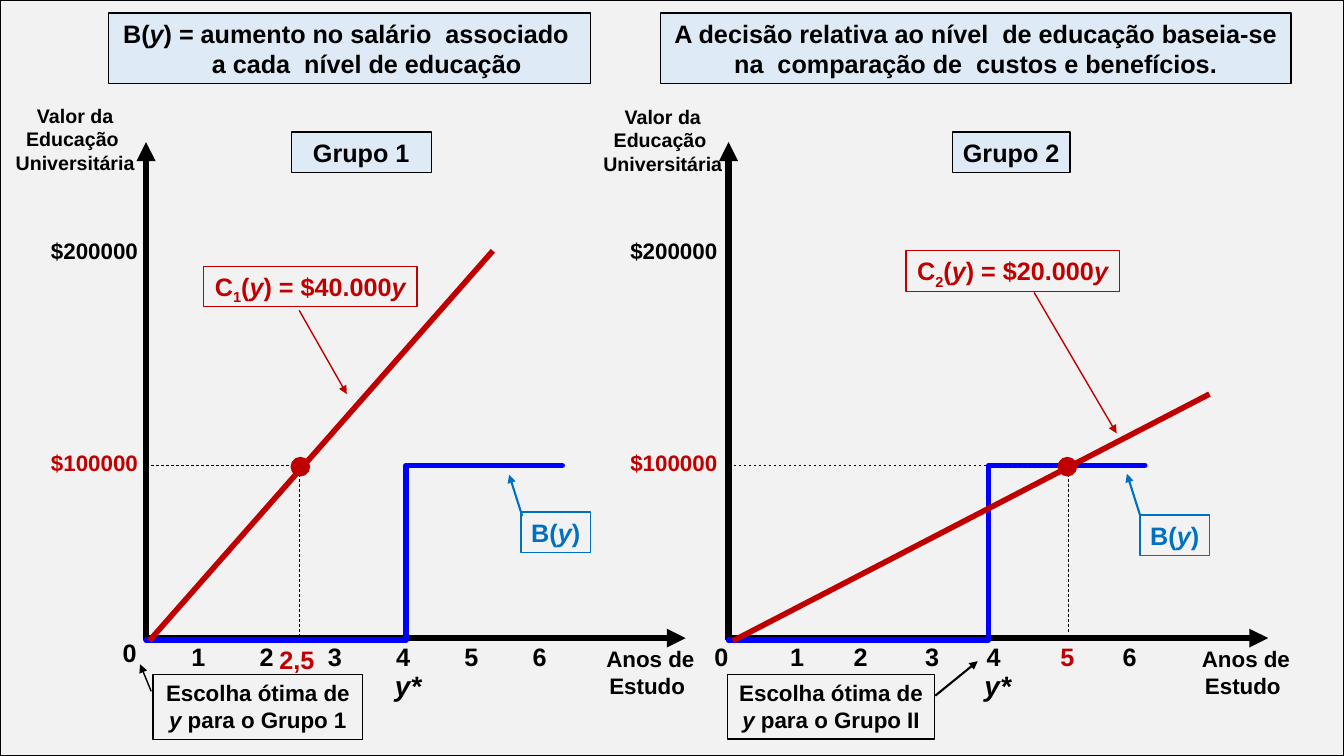
"""Builds the slide comparing the education choice of two groups."""
import pptx
import pptx.dml.color
import pptx.enum.shapes
import pptx.enum.text
import pptx.oxml
import pptx.oxml.ns
import pptx.util

Cm = pptx.util.Cm
Pt = pptx.util.Pt
RGBColor = pptx.dml.color.RGBColor
SHAPES = pptx.enum.shapes.MSO_SHAPE
COLORS = {
    "black": "000000",
    "background": "F2F2F2",
    "box": "DEEBF7",
    "cost": "C00000",
    "benefit": "0000FF",
    "benefit_label": "0070C0",
}

presentation = pptx.Presentation()
presentation.slide_width = Cm(33.87)
presentation.slide_height = Cm(19.05)
slide = presentation.slides.add_slide(presentation.slide_layouts[6])


def add_box(frame, paragraphs=(), size=18, color="black", fill=None, line=None,
            wrap=False, kind=SHAPES.RECTANGLE):
    """Adds a shape; each paragraph is a list of (text, style) runs."""
    shape = slide.shapes.add_shape(kind, *[Cm(length) for length in frame])
    shape.shadow.inherit = False
    if fill:
        shape.fill.solid()
        shape.fill.fore_color.rgb = RGBColor.from_string(COLORS[fill])
    else:
        shape.fill.background()
    if line:
        shape.line.color.rgb = RGBColor.from_string(COLORS[line])
        shape.line.width = Pt(1)
    else:
        shape.line.fill.background()
    text_frame = shape.text_frame
    text_frame.word_wrap = wrap
    text_frame.vertical_anchor = pptx.enum.text.MSO_ANCHOR.TOP
    for index, runs in enumerate(paragraphs):
        paragraph = text_frame.add_paragraph() if index else text_frame.paragraphs[0]
        paragraph.alignment = pptx.enum.text.PP_ALIGN.CENTER
        for text, style in runs:
            run = paragraph.add_run()
            run.text = text
            run.font.name = "Arial"
            run.font.size = Pt(size)
            run.font.bold = True
            run.font.italic = style == "italic"
            run.font.color.rgb = RGBColor.from_string(COLORS[color])
            if style == "subscript":
                run.font._element.set("baseline", "-25000")
    return shape


def add_line(points, color, width, arrow=False, dashed=False):
    """Adds a straight line between two points (x1, y1, x2, y2)."""
    connector = slide.shapes.add_connector(
        pptx.enum.shapes.MSO_CONNECTOR.STRAIGHT, *[Cm(length) for length in points])
    connector.line.color.rgb = RGBColor.from_string(COLORS[color])
    connector.line.width = Pt(width)
    if dashed:
        connector.line.dash_style = pptx.enum.dml.MSO_LINE.DASH
    if arrow:
        tail = pptx.oxml.parse_xml(
            f'<a:tailEnd {pptx.oxml.ns.nsdecls("a")} type="triangle"/>')
        connector.line._get_or_add_ln().append(tail)
    effects = pptx.oxml.parse_xml(f'<a:effectLst {pptx.oxml.ns.nsdecls("a")}/>')
    connector._element.spPr.append(effects)


groups = [
    {
        "name": "Grupo 1", "name_frame": (7.34, 3.33, 3.53, 1.02),
        "axis": 3.68, "value_title": (0.13, 2.49), "value_left": 1.02,
        "years_left": 14.94, "zero": (2.84, 15.93),
        "ticks": [4.57 + 1.72 * step for step in range(6)], "chosen_tick": None,
        "cost_index": "1", "cost_value": "$40.000", "cost_box": (5.13, 6.71),
        "cost_line": (3.76, 16.15, 12.42, 6.32),
        "cost_arrow": (7.54, 7.82, 8.74, 9.93),
        "benefit_box": (13.13, 12.9), "benefit_arrow": (13.16, 13, 12.83, 11.96),
        "star_left": 9.7, "dot_left": 7.34, "guide": (7.54, 11.94, 7.54, 16.03),
        "choice": " para o Grupo 1", "choice_frame": (3.86, 16.99, 5.28, 1.65),
        "choice_arrow": (3.81, 17.42, 3.53, 16.74), "choice_width": 1,
    },
    {
        "name": "Grupo 2", "name_frame": (24, 3.33, 2.97, 1.02),
        "axis": 18.36, "value_title": (14.94, 2.51), "value_left": 15.62,
        "years_left": 29.95, "zero": (17.75, 16.03),
        "ticks": [19.66, 21.26, 23.06, 24.61, 26.47, 28.04], "chosen_tick": 5,
        "cost_index": "2", "cost_value": "$20.000", "cost_box": (22.83, 6.32),
        "cost_line": (18.47, 16.15, 30.48, 9.93),
        "cost_arrow": (26.06, 7.37, 28.14, 10.92),
        "benefit_box": (28.73, 12.98), "benefit_arrow": (28.73, 12.98, 28.4, 11.94),
        "star_left": 24.56, "dot_left": 26.67, "guide": (26.92, 11.81, 26.92, 15.93),
        "choice": " para o Grupo II", "choice_frame": (18.34, 16.99, 5.21, 1.63),
        "choice_arrow": (23.57, 17.53, 24.64, 16.66), "choice_width": 1.5,
    },
]

add_box((0, 0, 33.87, 19.05), fill="background", line="black")

benefit_title = add_box(
    (2.74, 0.33, 12.14, 1.78),
    [[("B(", ""), ("y", "italic"), (") = aumento no salário  associado ", "")],
     [("a cada  nível de educação", "")]],
    fill="box", line="black", wrap=True)
second_line = benefit_title.text_frame.paragraphs[1]
second_line._element.get_or_add_pPr().set("marL", str(Cm(0.86)))
add_box(
    (16.64, 0.33, 15.9, 1.78),
    [[("A decisão relativa ao nível  de educação baseia-se "
       "na  comparação de  custos e benefícios.", "")]],
    fill="box", line="black", wrap=True)

for group in groups:
    axis = group["axis"]
    add_line((axis, 16.13, axis, 3.58), "black", 4.5, arrow=True)
    add_line((axis + 0.05, 16.08, axis + 13.6, 16.08), "black", 4.5, arrow=True)
    add_box((*group["value_title"], 3.53, 2.06),
            [[("Valor da", "")], [("Educação ", "")], [("Universitária", "")]], size=14)
    add_box((group["years_left"], 16.13, 2.9, 1.63), [[("Anos de Estudo ", "")]],
            size=16, wrap=True)
    for amount, top, color in (("$200000", 5.84, "black"), ("$100000", 11.2, "cost")):
        add_box((group["value_left"], top, 2.72, 0.94), [[(amount, "")]],
                size=16, color=color)
    add_box((*group["zero"], 0.86, 1.02), [[("0", "")]])
    for year, left in enumerate(group["ticks"], start=1):
        add_box((left, 16.03, 0.86, 1.02), [[(str(year), "")]],
                color="cost" if year == group["chosen_tick"] else "black")
    add_box(group["name_frame"], [[(group["name"], "")]], fill="box", line="black")

    builder = slide.shapes.build_freeform(Cm(axis), Cm(16.13))
    builder.add_line_segments(
        [(Cm(axis + 6.55), Cm(16.13)), (Cm(axis + 6.55), Cm(11.73)),
         (Cm(axis + 10.49), Cm(11.73))], close=False)
    benefit = builder.convert_to_shape()
    benefit.shadow.inherit = False
    benefit.fill.background()
    benefit.line.color.rgb = RGBColor.from_string(COLORS["benefit"])
    benefit.line.width = Pt(4)
    benefit.line._get_or_add_ln().set("cap", "rnd")
    add_box((*group["benefit_box"], 1.75, 1.02),
            [[("B(", ""), ("y", "italic"), (")", "")]],
            color="benefit_label", line="benefit_label")
    add_line(group["benefit_arrow"], "benefit_label", 1.5, arrow=True)

    add_line(group["cost_line"], "cost", 4)
    add_box((*group["cost_box"], 5.38, 1.02),
            [[("C", ""), (group["cost_index"], "subscript"), ("(", ""), ("y", "italic"),
              (f") = {group['cost_value']}", ""), ("y", "italic")]],
            color="cost", line="cost")
    add_line(group["cost_arrow"], "cost", 1, arrow=True)

    add_box(group["choice_frame"],
            [[("Escolha ótima de", "")], [("y", "italic"), (group["choice"], "")]],
            size=16, line="black")
    add_line(group["choice_arrow"], "black", group["choice_width"], arrow=True)
    add_box((group["star_left"], 16.71, 1.17, 1.09), [[("y*", "italic")]], size=20)

    add_line(group["guide"], "black", 0.5, dashed=True)
    add_line((axis, 11.73, group["guide"][0], 11.73), "black", 0.5, dashed=True)
    add_box((group["dot_left"], 11.53, 0.46, 0.46), fill="cost", line="cost",
            kind=SHAPES.OVAL)

add_box((6.73, 16.1, 1.5, 1.02), [[("2,5", "")]], color="cost")

presentation.save("out.pptx")
